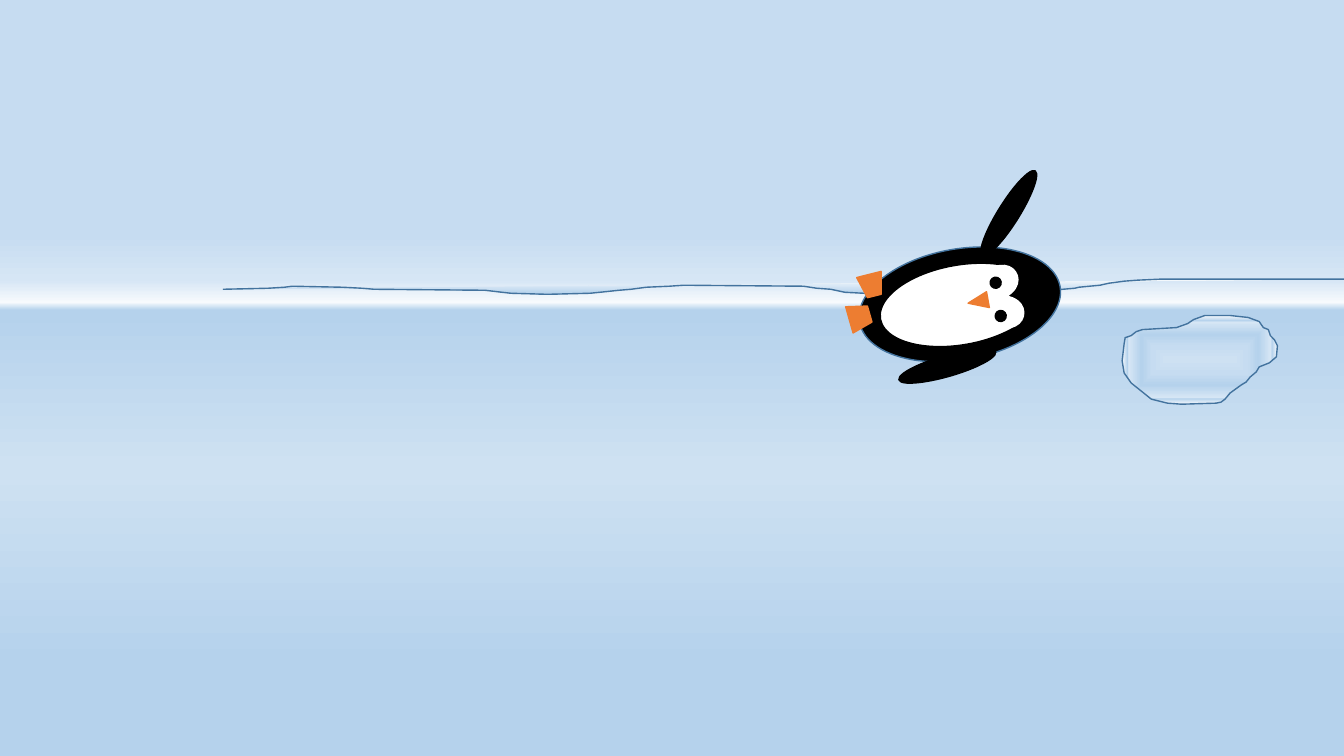
from lxml.etree import SubElement
from pptx import Presentation
from pptx.dml.color import RGBColor
from pptx.enum.shapes import MSO_SHAPE
from pptx.oxml.ns import qn
from pptx.util import Inches, Pt

COLORS = {
    "black": "000000",
    "white": "FFFFFF",
    "orange": "ED7D31",
    "outline": "43739E",
    "snow": "F7FAFD",
    "frost": "D6E6F5",
    "sky": "C6DCF1",
    "pale": "CEE1F2",
    "water": "B5D2EC",
}


def set_gradient(fill, element, stops, centred=False):
    fill.gradient()
    gradient = element.find(".//" + qn("a:gradFill"))
    for child in list(gradient):
        gradient.remove(child)
    stop_list = SubElement(gradient, qn("a:gsLst"))
    for position, color in stops:
        stop = SubElement(stop_list, qn("a:gs"), pos=str(position * 1000))
        SubElement(stop, qn("a:srgbClr"), val=COLORS[color])
    if centred:
        shade = SubElement(gradient, qn("a:path"), path="shape")
        SubElement(shade, qn("a:fillToRect"), l="50000", t="50000", r="50000", b="50000")
    else:
        SubElement(gradient, qn("a:lin"), ang="5400000", scaled="0")


def add_body_part(shapes, kind, box, rotation, color, line_color):
    shape = shapes.add_shape(kind, *[Inches(length) for length in box])
    shape.rotation = rotation
    shape.shadow.inherit = False
    shape.fill.solid()
    shape.fill.fore_color.rgb = RGBColor.from_string(COLORS[color])
    shape.line.color.rgb = RGBColor.from_string(COLORS[line_color])
    shape.line.width = Pt(1)


presentation = Presentation()
presentation.slide_width = Inches(13.33)
presentation.slide_height = Inches(7.5)
slide = presentation.slides.add_slide(presentation.slide_layouts[6])

set_gradient(slide.background.fill, slide.element, [
    (31, "sky"), (37, "frost"), (40, "snow"), (41, "water"), (62, "pale"), (88, "water"),
])

horizon = [
    (2.21, 2.87), (2.66, 2.86), (2.82, 2.85), (2.9, 2.84), (3.4, 2.85), (3.59, 2.86),
    (3.71, 2.87), (4.81, 2.88), (4.98, 2.9), (5.07, 2.91), (5.43, 2.92), (5.85, 2.91),
    (5.95, 2.9), (6.14, 2.88), (6.26, 2.87), (6.41, 2.85), (6.64, 2.84), (6.78, 2.83),
    (7.97, 2.84), (8.1, 2.86), (8.24, 2.87), (8.38, 2.9), (8.57, 2.91), (8.64, 2.92),
    (8.76, 2.94), (10.08, 2.93), (10.17, 2.92), (10.3, 2.91), (10.43, 2.88), (10.66, 2.86),
    (10.7, 2.85), (10.91, 2.83), (11, 2.81), (11.15, 2.79), (11.28, 2.78), (11.5, 2.77),
    (13.42, 2.77),
]
ice_hole = [
    (12.15, 3.96), (12.11, 3.99), (12.06, 4), (11.72, 4.01), (11.58, 4), (11.42, 3.96),
    (11.22, 3.8), (11.15, 3.7), (11.13, 3.58), (11.15, 3.41), (11.16, 3.35), (11.22, 3.33),
    (11.27, 3.29), (11.33, 3.27), (11.67, 3.25), (11.78, 3.21), (11.84, 3.17), (11.95, 3.13),
    (12.2, 3.13), (12.38, 3.15), (12.49, 3.19), (12.53, 3.25), (12.58, 3.27), (12.6, 3.33),
    (12.64, 3.37), (12.67, 3.43), (12.66, 3.54), (12.59, 3.6), (12.49, 3.64), (12.46, 3.69),
    (12.4, 3.74), (12.36, 3.79), (12.31, 3.82), (12.2, 3.9),
]
horizon_stops = [(0, "snow"), (83, "water"), (84, "water"), (100, "pale")]
ice_stops = [
    (0, "pale"), (31, "sky"), (57, "water"), (85, "frost"), (88, "water"), (100, "snow"),
]

for points, stops, closed in [(horizon, horizon_stops, False), (ice_hole, ice_stops, True)]:
    vertices = [(Inches(x), Inches(y)) for x, y in points]
    builder = slide.shapes.build_freeform(*vertices[0])
    builder.add_line_segments(vertices[1:], close=closed)
    shape = builder.convert_to_shape()
    shape.shadow.inherit = False
    set_gradient(shape.fill, shape.element, stops, centred=closed)
    shape.line.color.rgb = RGBColor.from_string(COLORS["outline"])
    shape.line.width = Pt(1)

TILT = 79.9
penguin = slide.shapes.add_group_shape()
for kind, box, rotation, color, line_color in [
    (MSO_SHAPE.OVAL, (8.97, 2.01, 1.1, 2.02), TILT, "black", "outline"),
    (MSO_SHAPE.OVAL, (9.13, 2.22, 0.79, 1.61), TILT, "white", "black"),
    (MSO_SHAPE.OVAL, (9.79, 2.66, 0.64, 0.53), TILT, "black", "black"),
    (MSO_SHAPE.HEART, (9.53, 2.67, 0.62, 0.59), TILT, "white", "white"),
    (MSO_SHAPE.OVAL, (9.82, 2.75, 0.11, 0.11), TILT, "black", "black"),
    (MSO_SHAPE.ISOSCELES_TRIANGLE, (9.62, 2.89, 0.16, 0.2), TILT + 180, "orange", "orange"),
    (MSO_SHAPE.OVAL, (9.87, 3.08, 0.11, 0.11), TILT, "black", "black"),
]:
    add_body_part(penguin.shapes, kind, box, rotation, color, line_color)

for kind, box, rotation, color in [
    (MSO_SHAPE.OVAL, (9.29, 3.13, 0.21, 1), 73.9, "black"),
    (MSO_SHAPE.OVAL, (9.9, 1.62, 0.21, 0.99), 212, "black"),
    (MSO_SHAPE.TRAPEZOID, (8.39, 3.04, 0.27, 0.21), 74.1, "orange"),
    (MSO_SHAPE.TRAPEZOID, (8.52, 2.72, 0.25, 0.22), 165.9, "orange"),
]:
    add_body_part(slide.shapes, kind, box, rotation, color, color)

presentation.save("out.pptx")
